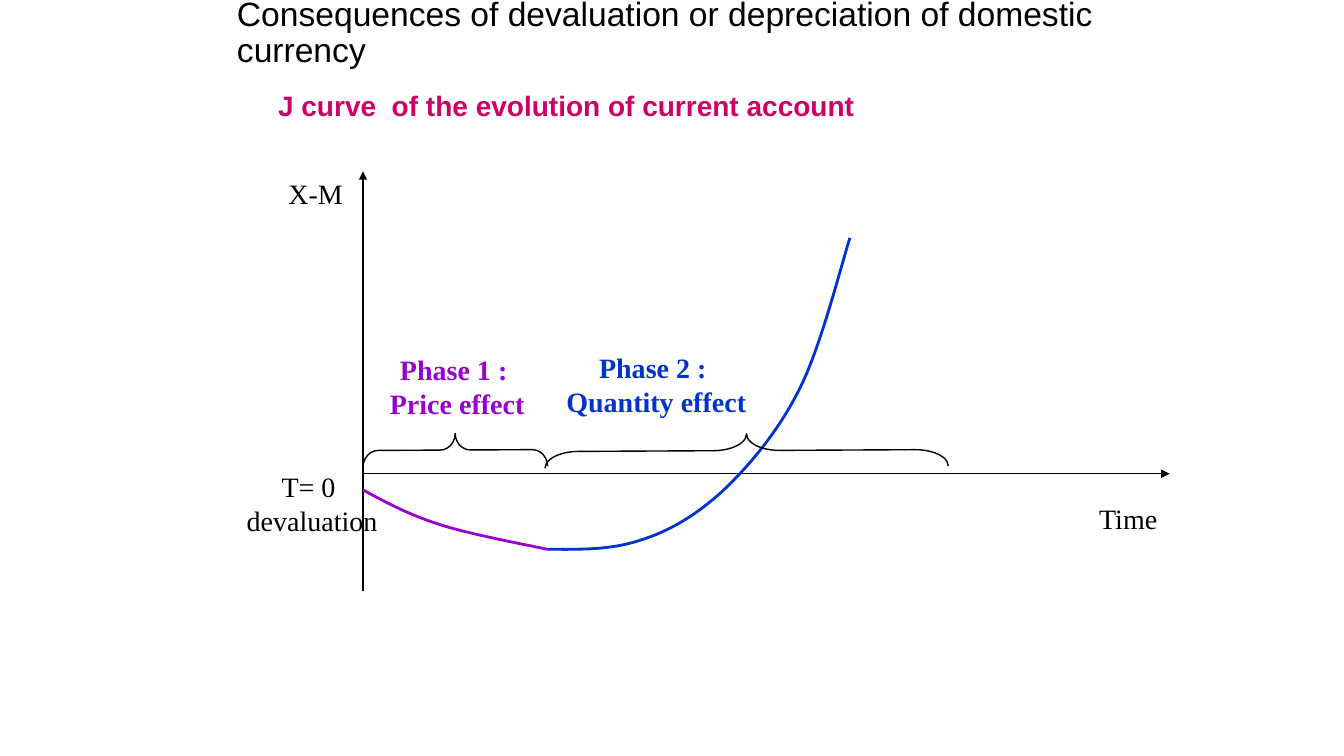
"""Build the J curve slide on the effects of a devaluation."""
import pptx
import pptx.dml.color
import pptx.enum.shapes
import pptx.enum.text
import pptx.oxml.ns
import pptx.util
from lxml import etree
from pptx.util import Inches

RGBColor = pptx.dml.color.RGBColor
BLACK = RGBColor(0x00, 0x00, 0x00)
PINK = RGBColor(0xCC, 0x00, 0x66)
PURPLE = RGBColor(0x99, 0x00, 0xCC)
BLUE = RGBColor(0x00, 0x33, 0xCC)

ALIGN = pptx.enum.text.PP_ALIGN
ANCHOR = pptx.enum.text.MSO_ANCHOR
FIT = pptx.enum.text.MSO_AUTO_SIZE
STEPS = 16
ZERO_X, ZERO_Y = 3.6, 4.7


def apply(target, values):
    for name, value in values.items():
        setattr(target, name, value)


def place(shape, left, top, width, height):
    box = {"left": left, "top": top, "width": width, "height": height}
    apply(shape, {name: Inches(value) for name, value in box.items()})


def write(shape, lines, frame, para, font):
    apply(shape.text_frame, frame)
    shape.text_frame.text = "\n".join(lines)
    for item in shape.text_frame.paragraphs:
        apply(item, para)
        for run in item.runs:
            apply(run.font, {k: v for k, v in font.items() if k != "color"})
            run.font.color.rgb = font["color"]


def stroke(shape, color, points):
    shape.line.color.rgb = color
    shape.line.width = pptx.util.Pt(points)


def add_label(slide, box, lines, color=BLACK, bold=False):
    label = slide.shapes.add_textbox(*map(Inches, box))
    write(label, lines,
          {"word_wrap": False, "auto_size": FIT.SHAPE_TO_FIT_TEXT},
          {"alignment": ALIGN.CENTER},
          {"name": "Times New Roman", "size": pptx.util.Pt(20),
           "bold": bold, "color": color})


def add_axis(slide, start, end):
    kind = pptx.enum.shapes.MSO_CONNECTOR.STRAIGHT
    axis = slide.shapes.add_connector(kind, *map(Inches, start + end))
    stroke(axis, BLACK, 1)
    props = axis._element.spPr
    tag = pptx.oxml.ns.qn
    etree.SubElement(props.get_or_add_ln(), tag("a:tailEnd"), type="triangle")
    etree.SubElement(props, tag("a:effectLst"))


def blend(a, b, c, d, t):
    s = 1 - t
    return s**3 * a + 3 * s * s * t * b + 3 * s * t * t * c + t**3 * d


def add_curve(slide, knots, color):
    points = [tuple(Inches(blend(*axis, step / STEPS))
                    for axis in zip(*knots[i:i + 4]))
              for i in range(0, len(knots) - 1, 3)
              for step in range(1, STEPS + 1)]
    form = slide.shapes.build_freeform(*map(Inches, knots[0]))
    form.add_line_segments(points, close=False)
    curve = form.convert_to_shape()
    curve.shadow.inherit = False
    curve.fill.background()
    stroke(curve, color, 2)


def add_brace(slide, box, bend):
    kind = pptx.enum.shapes.MSO_SHAPE.LEFT_BRACE
    brace = slide.shapes.add_shape(kind, *map(Inches, box))
    brace.adjustments[0] = bend
    brace.adjustments[1] = 0.5
    brace.rotation = 89.7
    brace.shadow.inherit = False
    brace.fill.background()
    stroke(brace, BLACK, 1)


def add_heads(slide):
    title = slide.shapes.title
    place(title, 2.25, 0, 9.42, 0.67)
    write(title,
          ["Consequences of devaluation or depreciation of domestic currency"],
          {"vertical_anchor": ANCHOR.MIDDLE, "auto_size": FIT.NONE,
           "word_wrap": True},
          {"alignment": ALIGN.LEFT, "line_spacing": 0.9,
           "space_before": pptx.util.Pt(0)},
          {"name": "Arial", "size": pptx.util.Pt(24), "color": BLACK})
    head = slide.shapes.add_textbox(*map(Inches, (2.26, 0.83, 9.14, 0.47)))
    write(head, ["J curve  of the evolution of current account"],
          {"word_wrap": True},
          {"alignment": ALIGN.JUSTIFY, "space_before": pptx.util.Pt(4)},
          {"name": "Arial", "size": pptx.util.Pt(20), "bold": True,
           "color": PINK})
    props = head.text_frame.paragraphs[0]._p.get_or_add_pPr()
    props.set("indent", str(Inches(0.4)))


def main():
    deck = pptx.Presentation()
    apply(deck, {"slide_width": Inches(13.33), "slide_height": Inches(7.5)})
    slide = deck.slides.add_slide(deck.slide_layouts.get_by_name("Title Only"))
    add_heads(slide)

    add_axis(slide, (ZERO_X, 5.86), (ZERO_X, 1.7))
    add_axis(slide, (ZERO_X, ZERO_Y), (11.6, ZERO_Y))
    add_label(slide, (2.76, 1.7, 0.74, 0.43), ["X-M"])

    low = (5.43, 5.45)
    add_curve(slide, [(ZERO_X, 4.86), (3.82, 4.98), (4.04, 5.1), (4.35, 5.2),
                      (4.65, 5.3), (5.25, 5.41), low], PURPLE)
    add_curve(slide, [low, (5.74, 5.45), (6.05, 5.46), (6.35, 5.36),
                      (6.64, 5.27), (6.91, 5.11), (7.18, 4.86),
                      (7.44, 4.61), (7.72, 4.28), (7.93, 3.86),
                      (8.14, 3.45), (8.35, 2.61), (8.43, 2.36)], BLUE)

    add_label(slide, (2.34, 4.61, 1.51, 0.77), ["T= 0 ", "devaluation"])
    add_brace(slide, (4.35, 3.55, 0.33, 1.83), 0.458)
    add_brace(slide, (7.24, 2.47, 0.33, 4), 0.999)
    add_label(slide, (3.76, 3.45, 1.55, 0.77),
              ["Phase 1 : ", "Price effect"], PURPLE, True)
    add_label(slide, (5.51, 3.43, 2, 0.77),
              ["Phase 2 : ", "Quantity effect"], BLUE, True)
    add_label(slide, (10.8, 4.93, 0.78, 0.44), ["Time"])
    deck.save("out.pptx")


if __name__ == "__main__":
    main()
